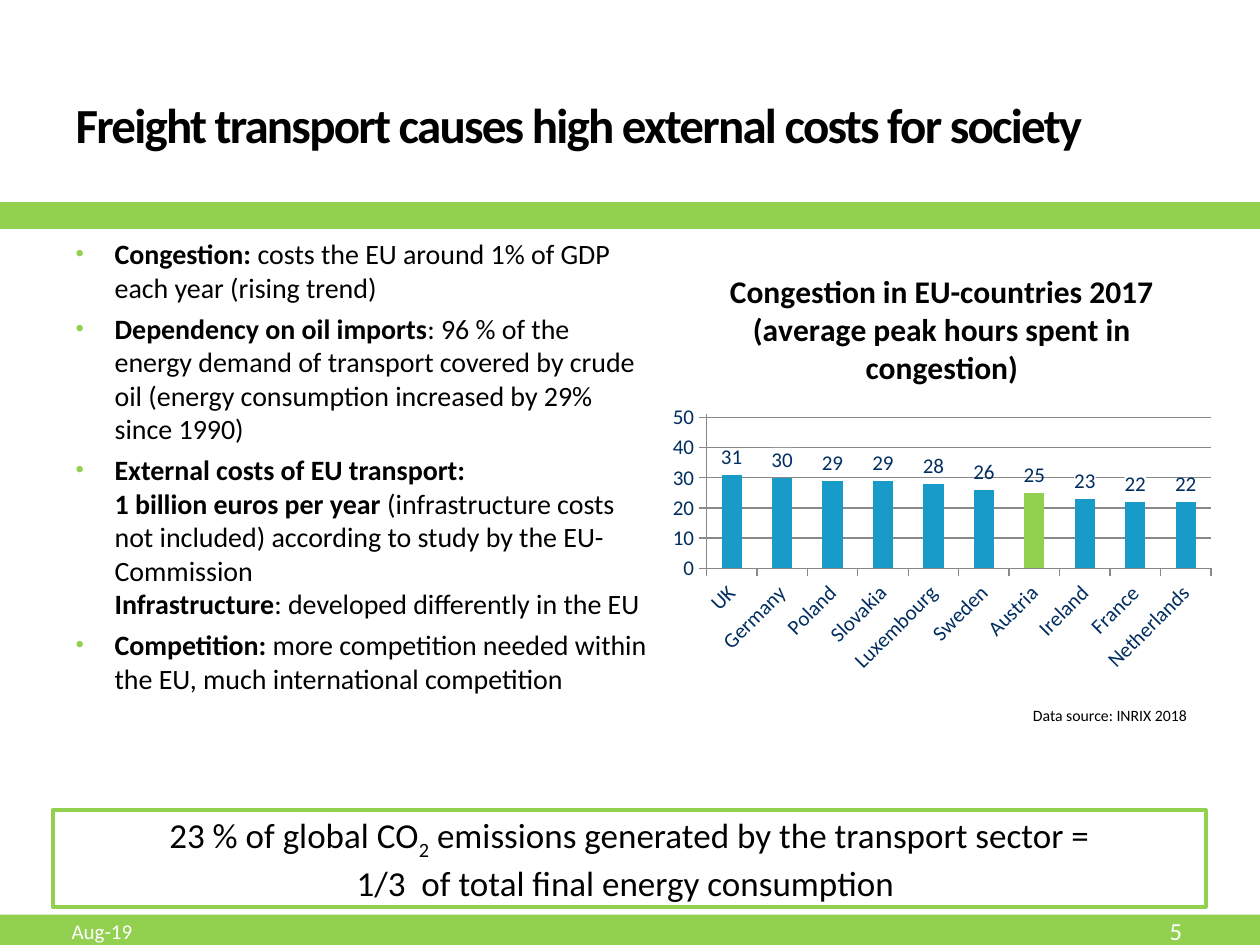
"""Build the slide on the external costs of freight transport."""
import lxml.etree
import pptx
import pptx.chart.data
import pptx.dml.color
import pptx.enum.chart
import pptx.enum.shapes
import pptx.enum.text
import pptx.oxml
import pptx.oxml.ns
import pptx.util

Inches, Pt = pptx.util.Inches, pptx.util.Pt
Align, Anchor = pptx.enum.text.PP_ALIGN, pptx.enum.text.MSO_ANCHOR
GREEN, BLUE, NAVY, GRAY = "92D050", "189BC8", "002E60", "888888"
qn = pptx.oxml.ns.qn


def color(value):
    """Turn a hex string into a colour."""
    return pptx.dml.color.RGBColor.from_string(value)


def write(paragraph, parts, size, ink="000000", align=Align.LEFT):
    """Fill a paragraph with (text, font values) parts, breaking at newlines."""
    paragraph.alignment = align
    for text, extra in parts:
        for number, line in enumerate(text.split("\n")):
            if number:
                paragraph.add_line_break()
            if not line:
                continue
            run = paragraph.add_run()
            run.text = line
            values = {"name": "Calibri", "size": Pt(size), "bold": False, **extra}
            for name, value in values.items():
                setattr(run.font, name, value)
            run.font.color.rgb = color(ink)


deck = pptx.Presentation()
deck.slide_width, deck.slide_height = Inches(10), Inches(7.5)
slide = deck.slides.add_slide(deck.slide_layouts[1])

bars = [(-0.04, 7.26, 10.16, 0.5, GREEN, 0),
        (0, 1.62, 10.12, 0.18, GREEN, 2.08),
        (0.42, 6.43, 9.15, 0.77, "FFFFFF", 2.08)]
for left, top, width, height, fill, weight in bars:
    bar = slide.shapes.add_shape(pptx.enum.shapes.MSO_SHAPE.RECTANGLE,
                                 Inches(left), Inches(top), Inches(width), Inches(height))
    bar.shadow.inherit = False
    bar.fill.solid()
    bar.fill.fore_color.rgb = color(fill)
    if weight:
        bar.line.color.rgb = color(GREEN)
        bar.line.width = Pt(weight)
    else:
        bar.line.fill.background()
message = bar.text_frame
message.word_wrap = True
message.vertical_anchor = Anchor.MIDDLE
write(message.paragraphs[0], [("23 % of global CO", {}), ("2", {}),
                              (" emissions generated by the transport sector =", {})],
      20, align=Align.CENTER)
message.paragraphs[0].runs[1]._r.get_or_add_rPr().set("baseline", "-25000")
write(message.add_paragraph(), [("1/3  of total final energy consumption ", {})],
      20, align=Align.CENTER)

headline, arguments = slide.shapes.title, slide.placeholders[1]
places = [(headline, (0.5, 0.44, 8.52, 1.08)), (arguments, (0.5, 1.83, 4.75, 5.16))]
for holder, place in places:
    for name, value in zip(("left", "top", "width", "height"), place):
        setattr(holder, name, Inches(value))
    holder.text_frame.auto_size = pptx.enum.text.MSO_AUTO_SIZE.NONE
    holder.text_frame.word_wrap = True
headline.text_frame.vertical_anchor = Anchor.MIDDLE
write(headline.text_frame.paragraphs[0],
      [("Freight transport causes high external costs for society", {"bold": True})], 28)
headline.text_frame.paragraphs[0].runs[0]._r.get_or_add_rPr().set("spc", "-100")

strong = {"bold": True}
points = [
    [("Congestion: ", strong), ("costs the EU around 1% of GDP each year (rising trend)", {})],
    [("Dependency on oil imports", strong),
     (": 96 % of the energy demand of transport covered by crude oil "
      "(energy consumption increased by 29% since 1990)", {})],
    [("External costs of EU transport: \n1 billion euros per year", strong),
     (" (infrastructure costs not included) according to study by the EU-Commission\n", {}),
     ("Infrastructure", strong), (": developed differently in the EU", {})],
    [("Competition:", strong),
     (" more competition needed within the EU, much international competition", {})],
]
for number, parts in enumerate(points):
    frame = arguments.text_frame
    point = frame.add_paragraph() if number else frame.paragraphs[0]
    layout = point._p.get_or_add_pPr()
    layout.set("marL", str(Inches(0.31)))
    layout.set("indent", str(Inches(-0.31)))
    point.space_before = Pt(4.1 if number else 0)
    bullet_color = lxml.etree.SubElement(layout, qn("a:buClr"))
    lxml.etree.SubElement(bullet_color, qn("a:srgbClr"), val=GREEN)
    lxml.etree.SubElement(layout, qn("a:buSzPct"), val="85000")
    lxml.etree.SubElement(layout, qn("a:buFont"), typeface="Arial")
    lxml.etree.SubElement(layout, qn("a:buChar"), char="•")
    write(point, parts, 16)

congestion = pptx.chart.data.CategoryChartData()
congestion.categories = ["UK", "Germany", "Poland", "Slovakia", "Luxembourg",
                         "Sweden", "Austria", "Ireland", "France", "Netherlands"]
congestion.add_series("Series 1", [31, 30, 29, 29, 28, 26, 25, 23, 22, 22])
chart = slide.shapes.add_chart(pptx.enum.chart.XL_CHART_TYPE.COLUMN_CLUSTERED, Inches(5.25),
                               Inches(1.97), Inches(4.45), Inches(3.45), congestion).chart
chart.has_legend = False
chart.font.name, chart.font.size = "Calibri", Pt(18)
chart.has_title = True
write(chart.chart_title.text_frame.paragraphs[0],
      [("Congestion in EU-countries 2017 (average peak hours spent in congestion)", strong)],
      18, align=Align.CENTER)

hours, countries = chart.value_axis, chart.category_axis
scale = {"minimum_scale": 0, "maximum_scale": 51, "major_unit": 10, "has_major_gridlines": True}
for name, value in scale.items():
    setattr(hours, name, value)
hours.major_gridlines.format.line.color.rgb = color(GRAY)
plot = chart.plots[0]
plot.gap_width = 150
plot.vary_by_categories = False
columns = plot.series[0]
columns.format.fill.solid()
columns.format.fill.fore_color.rgb = color(BLUE)
austria = columns.points[6].format.fill
austria.solid()
austria.fore_color.rgb = color(GREEN)
columns.data_labels.show_value = True
outside = pptx.enum.chart.XL_LABEL_POSITION.OUTSIDE_END
columns.data_labels.position = outside
label_fonts = [columns.data_labels.font]
for index in (1, 3, 7, 8):
    label = columns.points[index].data_label
    label_fonts.append(label.font)
    label.position = outside
for label in columns._element.iter(qn("c:dLbl")):
    backing = label.find(qn("c:spPr"))
    if backing is None:
        backing = lxml.etree.Element(qn("c:spPr"))
        label.find(qn("c:txPr")).addprevious(backing)
    fill = lxml.etree.SubElement(backing, qn("a:solidFill"))
    lxml.etree.SubElement(fill, qn("a:srgbClr"), val="FFFFFF")
for axis in (hours, countries):
    axis.major_tick_mark = pptx.enum.chart.XL_TICK_MARK.OUTSIDE
    axis.format.line.color.rgb = color(GRAY)
    label_fonts.append(axis.tick_labels.font)
for font in label_fonts:
    for name, value in {"name": "Calibri", "size": Pt(12), "bold": False}.items():
        setattr(font, name, value)
    font.color.rgb = color(NAVY)
countries._element.find(qn("c:txPr")).find(qn("a:bodyPr")).set("rot", "-2700000")

notes = [("5", 8.31, 7.21, 1.17, 0.36, 14, "FFFFFF", Align.RIGHT, Anchor.MIDDLE),
         ("Data source: INRIX 2018", 8.1, 5.55, 1.57, 0.25, 9, "000000", Align.LEFT, Anchor.TOP),
         ("Aug-19", 0.47, 7.21, 3.17, 0.36, 12, "FFFFFF", Align.LEFT, Anchor.MIDDLE)]
for text, left, top, width, height, size, ink, align, anchor in notes:
    frame = slide.shapes.add_textbox(Inches(left), Inches(top),
                                     Inches(width), Inches(height)).text_frame
    frame.word_wrap = True
    frame.vertical_anchor = anchor
    write(frame.paragraphs[0], [(text, {})], size, ink, align)

deck.save("out.pptx")
